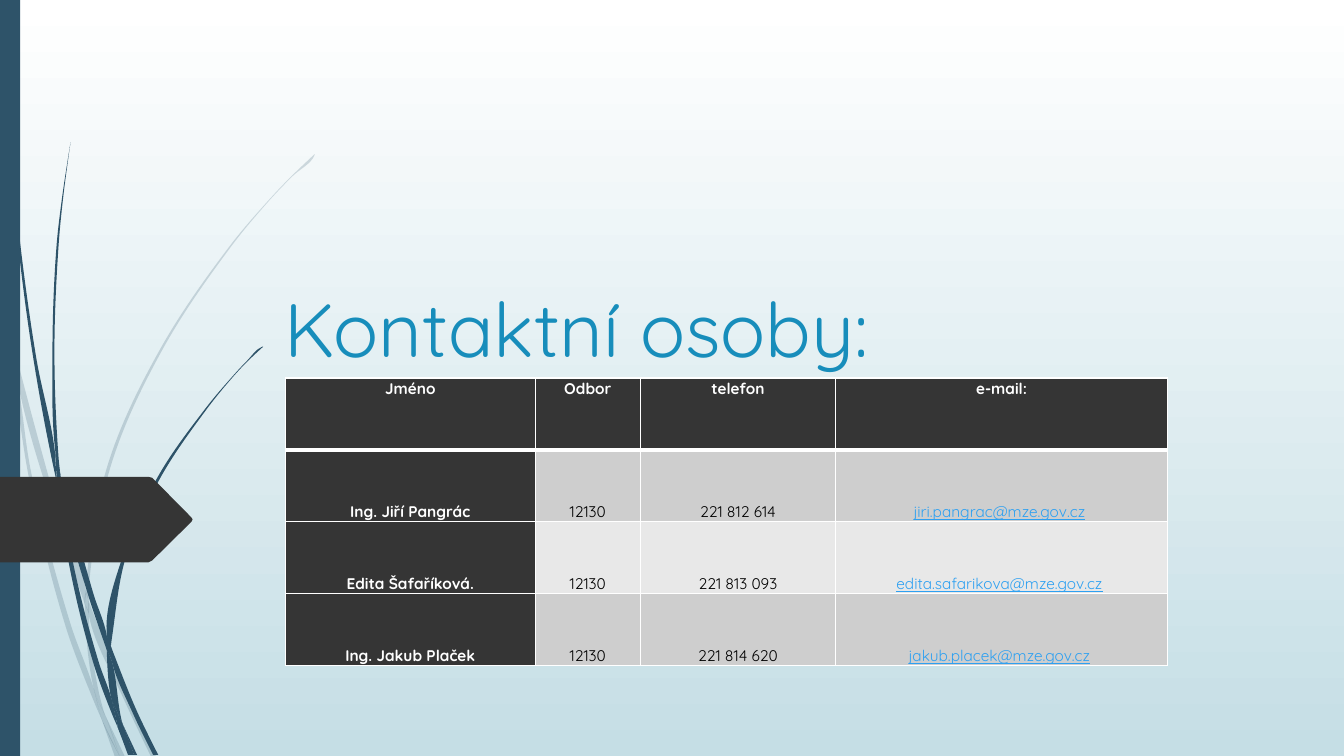
from lxml import etree
from pptx import Presentation
from pptx.dml.color import RGBColor
from pptx.enum.shapes import MSO_SHAPE as Preset
from pptx.enum.text import MSO_ANCHOR as Anchor, PP_ALIGN as Align
from pptx.oxml.ns import qn
from pptx.util import Inches, Pt

FONT = "Quicksand"
NAVY, CHARCOAL, WHITE, BLACK = "2E5369", "353535", "FFFFFF", "000000"
TITLE_BLUE, LINK_BLUE = "178DBB", "2DA0F1"
BANDS = ["CECECE", "E8E8E8"]

# Outlines of the blades of grass, piece by piece, in inches.
PALE_BLADES = [
    [(0.11, 3.5), (0.09, 3.22), (0, 2.82), (0, 2.99), (0.1, 3.44)],
    [(0.58, 5.22), (0.84, 5.99), (0.85, 5.86), (0.62, 5.2), (0.14, 3.45), (0.17, 3.76)],
    [(0.92, 6.07), (0.88, 5.96), (0.88, 6.1), (1.23, 6.94), (1.5, 7.51), (1.55, 7.51), (1.27, 6.92)],
    [(1.19, 7.51), (1.24, 7.51), (1.05, 7.11)],
    [(0.93, 6.83), (0.7, 6.19), (0.31, 4.69), (0.17, 3.76), (0.11, 3.5), (0.28, 4.7),
     (0.65, 6.21), (0.92, 6.93), (1.01, 7.14), (0.99, 7.07)],
    [(0.84, 5.99), (0.87, 6.46), (0.93, 6.83), (0.96, 6.92), (1.05, 7.11), (1.03, 7.06),
     (0.91, 6.46), (0.88, 6.1), (0.88, 6.08)],
    [(0.88, 5.84), (1.1, 4.62), (1.6, 3.49), (2.29, 2.45), (2.68, 1.98), (2.9, 1.75),
     (3.12, 1.54), (3.12, 1.53), (2.89, 1.75), (2.68, 1.97), (2.28, 2.44), (1.58, 3.48),
     (1.07, 4.61), (0.85, 5.84), (0.85, 5.86), (0.88, 5.96)],
    [(1.01, 7.14), (1.14, 7.51), (1.19, 7.51)],
    [(0.88, 6.08), (0.88, 6.1), (0.88, 5.96), (0.85, 5.86), (0.84, 5.99)],
    [(0.96, 6.92), (0.93, 6.83), (0.99, 7.07), (1.01, 7.14), (1.19, 7.51), (1.05, 7.11)],
]
DARK_BLADES = [
    [(0.07, 1.1), (0.17, 2.33), (0.33, 3.55), (0.56, 4.77), (0.57, 4.81), (0.55, 4.57),
     (0.55, 4.53), (0.36, 3.55), (0.19, 2.32), (0.08, 1.09), (0.05, 0.48), (0.04, 0),
     (0.03, 0), (0.04, 0.48)],
    [(0.88, 5.92), (1.06, 6.45), (1.06, 6.33), (1.06, 6.31), (0.93, 5.9), (0.6, 4.72), (0.64, 5.05)],
    [(1.13, 6.49), (1.1, 6.41), (1.11, 6.56), (1.32, 7.08), (1.52, 7.49), (1.57, 7.49), (1.36, 7.06)],
    [(1.1, 6.91), (0.98, 6.57), (0.72, 5.56), (0.64, 5.05), (0.57, 4.77), (0.68, 5.57),
     (0.93, 6.59), (1.11, 7.08), (1.17, 7.22), (1.16, 7.17)],
    [(0.6, 4.72), (0.58, 4.53), (0.54, 3.49), (0.58, 2.45), (0.63, 1.93), (0.7, 1.41),
     (0.62, 1.93), (0.56, 2.45), (0.52, 3.49), (0.55, 4.49)],
    [(1.33, 7.49), (1.36, 7.49), (1.22, 7.19)],
    [(0.57, 4.77), (0.64, 5.05), (0.6, 4.72), (0.55, 4.49), (0.55, 4.53)],
    [(1.11, 6.33), (1.25, 5.52), (1.58, 4.76), (2.05, 4.06), (2.31, 3.74), (2.45, 3.59),
     (2.61, 3.44), (2.6, 3.44), (2.45, 3.58), (2.31, 3.73), (2.04, 4.05), (1.56, 4.74),
     (1.22, 5.51), (1.06, 6.31), (1.1, 6.41)],
    [(1.17, 7.22), (1.27, 7.49), (1.31, 7.49)],
    [(1.06, 6.45), (1.1, 6.91), (1.16, 7.06), (1.22, 7.19), (1.21, 7.16), (1.11, 6.56), (1.09, 6.51)],
    [(1.06, 6.45), (1.09, 6.51), (1.11, 6.56), (1.1, 6.41), (1.06, 6.31), (1.06, 6.33)],
    [(1.16, 7.06), (1.1, 6.91), (1.16, 7.17), (1.17, 7.22), (1.3, 7.49), (1.33, 7.49), (1.22, 7.19)],
]
CONTACT_ROWS = [
    ["Jméno", "Odbor", "telefon", "e-mail:"],
    ["Ing. Jiří Pangrác", "12130", "221 812 614", "jiri.pangrac@mze.gov.cz"],
    ["Edita Šafaříková.", "12130", "221 813 093", "edita.safarikova@mze.gov.cz"],
    ["Ing. Jakub Plaček", "12130", "221 814 620", "jakub.placek@mze.gov.cz"],
]
COLUMN_WIDTHS = [2.48, 1.04, 1.94, 3.29]


def rgb(color):
    return RGBColor.from_string(color)


def paint(shape, color, opacity=100):
    shape.shadow.inherit = False
    shape.fill.solid()
    shape.fill.fore_color.rgb = rgb(color)
    shape.line.fill.background()
    if opacity < 100:
        tint = shape.element.spPr.find(".//" + qn("a:srgbClr"))
        etree.SubElement(tint, qn("a:alpha"), val=str(opacity * 1000))


def add_span(para, text, size, color, bold=False, underline=False):
    span = para.add_run()
    span.text = text
    font = span.font
    font.name, font.size, font.bold, font.underline = FONT, Pt(size), bold, underline
    font.color.rgb = rgb(color)


def add_outline(page, points, left=0, top=0):
    corners = [(Inches(left + x), Inches(top + y)) for x, y in points]
    builder = page.shapes.build_freeform(*corners[0])
    builder.add_line_segments(corners[1:] + corners[:1], close=True)
    return builder.convert_to_shape()


def direction(before, knot, after):
    """Unit tangent at a knot, or zero where the outline turns sharply."""
    arriving = (knot - before) / abs(knot - before)
    leaving = (after - knot) / abs(after - knot)
    total = arriving + leaving
    return total / abs(total) if abs(total) > 1.7 else 0


def round_segments(shape):
    """Turn the straight sides of an outline into smooth Bézier curves."""
    knots = [complex(int(pt.get("x")), int(pt.get("y"))) for pt in shape.element.iter(qn("a:pt"))][:-1]
    count = len(knots)
    tangents = [direction(knots[i - 1], knots[i], knots[(i + 1) % count]) for i in range(count)]
    for i, side in enumerate(list(shape.element.iter(qn("a:lnTo")))):
        j = (i + 1) % count
        reach = abs(knots[j] - knots[i]) / 3
        curve = etree.Element(qn("a:cubicBezTo"))
        for point in (knots[i] + tangents[i] * reach, knots[j] - tangents[j] * reach, knots[j]):
            etree.SubElement(curve, qn("a:pt"), x=str(round(point.real)), y=str(round(point.imag)))
        side.getparent().replace(side, curve)


def add_blades(page, blades, opacity, left=0, top=0):
    for points in blades:
        blade = add_outline(page, points, left, top)
        round_segments(blade)
        paint(blade, NAVY, opacity)


def add_side_bar(page, *box):
    paint(page.shapes.add_shape(Preset.RECTANGLE, *map(Inches, box)), NAVY)


def add_page_arrow(page, left, top, width, height):
    neck, middle, bevel = width - 0.4, height / 2, 0.02
    points = [(0, 0), (neck - 0.04, 0), (neck, bevel / 2), (width - 0.01, middle - bevel),
              (width, middle), (width - 0.01, middle + bevel), (neck, height - bevel),
              (neck - 0.04, height), (0, height)]
    paint(add_outline(page, points, left, top), CHARCOAL)


def add_title(page, *box):
    title = page.shapes.title
    title.left, title.top, title.width, title.height = map(Inches, box)
    title.text_frame.word_wrap = True
    title.text_frame.vertical_anchor = Anchor.BOTTOM
    para = title.text_frame.paragraphs[0]
    para.alignment = Align.LEFT
    add_span(para, "Kontaktní osoby:", 54, TITLE_BLUE)


def set_borders(cell, bottom_width):
    properties = cell._tc.get_or_add_tcPr()
    for index, side in enumerate("LRTB"):
        width = bottom_width if side == "B" else 1
        line = etree.Element(qn("a:ln" + side), w=str(Pt(width)))
        fill = etree.SubElement(line, qn("a:solidFill"))
        etree.SubElement(fill, qn("a:srgbClr"), val=WHITE)
        properties.insert(index, line)


def fill_cell(cell, text, row, column):
    is_header, is_email = row == 0, row > 0 and column == 3
    is_dark = is_header or column == 0
    cell.margin_left = cell.margin_right = Inches(0.07)
    cell.margin_top = cell.margin_bottom = 0
    cell.vertical_anchor = Anchor.TOP if is_header else Anchor.BOTTOM
    cell.fill.solid()
    cell.fill.fore_color.rgb = rgb(CHARCOAL if is_dark else BANDS[(row - 1) % 2])
    para = cell.text_frame.paragraphs[0]
    para.alignment, para.line_spacing = Align.CENTER, 1.07
    color = WHITE if is_dark else LINK_BLUE if is_email else BLACK
    add_span(para, text, 11, color, bold=is_dark, underline=is_email)
    if is_email:
        add_span(para, " ", 11, BLACK)
    set_borders(cell, 3 if is_header else 1)


def add_contacts(page, *box):
    shape = page.shapes.add_table(len(CONTACT_ROWS), len(COLUMN_WIDTHS), *map(Inches, box))
    for column, width in zip(shape.table.columns, COLUMN_WIDTHS):
        column.width = Inches(width)
    for r, texts in enumerate(CONTACT_ROWS):
        for c, text in enumerate(texts):
            fill_cell(shape.table.cell(r, c), text, r, c)


def set_background(page):
    fill = page.background.fill
    fill.gradient()
    fill.gradient_angle = 270
    for stop, position, color in zip(fill.gradient_stops, (0, 1), (WHITE, "C5DEE5")):
        stop.position, stop.color.rgb = position, rgb(color)


def main():
    deck = Presentation()
    deck.slide_width, deck.slide_height = Inches(13.33), Inches(7.5)
    page = deck.slides.add_slide(deck.slide_layouts[0])
    subtitle = page.placeholders[1].element
    subtitle.getparent().remove(subtitle)
    set_background(page)
    add_blades(page, PALE_BLADES, opacity=20)
    add_blades(page, DARK_BLADES, opacity=100)
    add_side_bar(page, 0, 0, 0.2, 7.5)
    add_page_arrow(page, 0, 4.73, 1.91, 0.85)
    add_title(page, 2.72, 1.28, 9.75, 2.47)
    add_contacts(page, 2.83, 3.75, 8.75, 2.85)
    deck.save("out.pptx")


if __name__ == "__main__":
    main()
